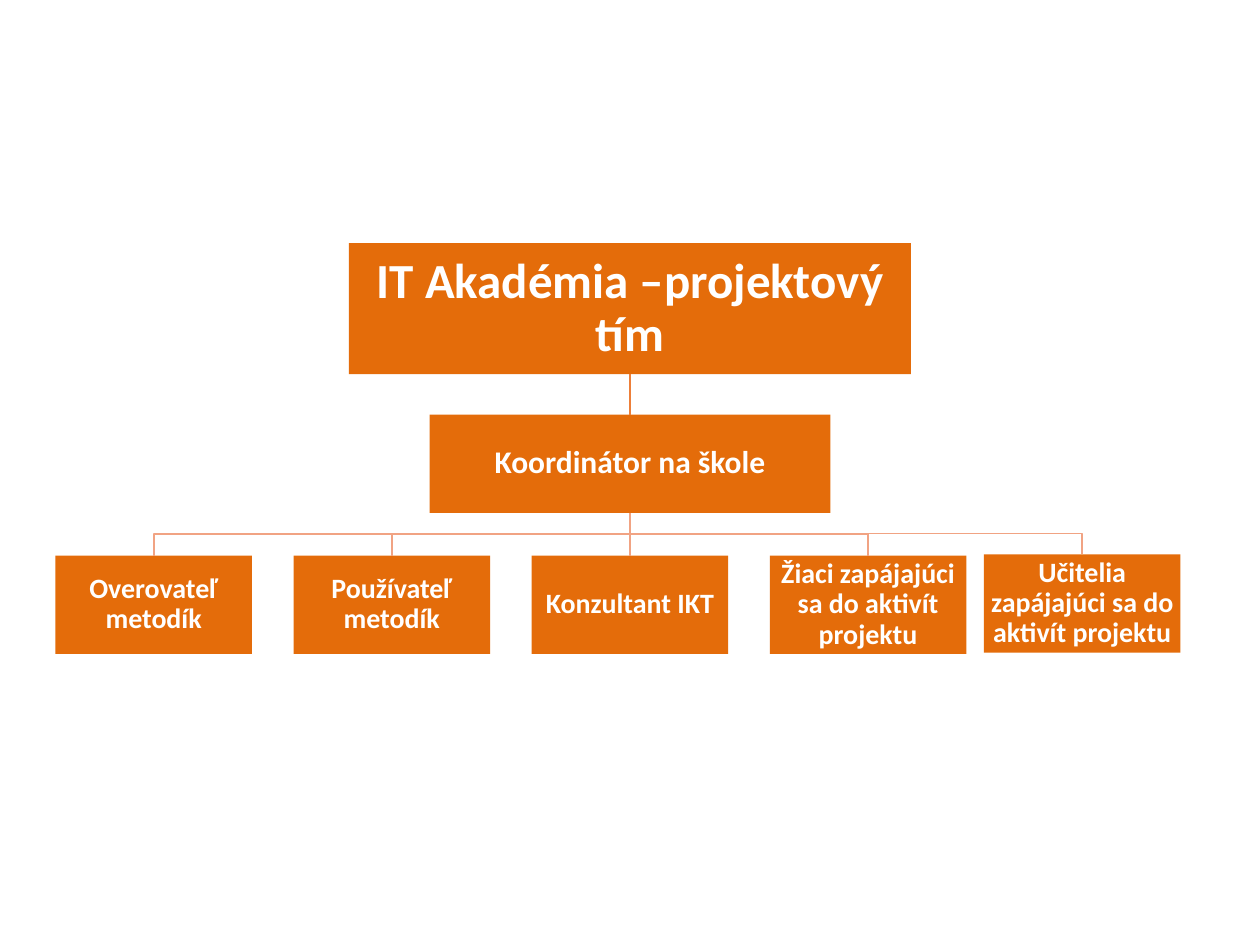
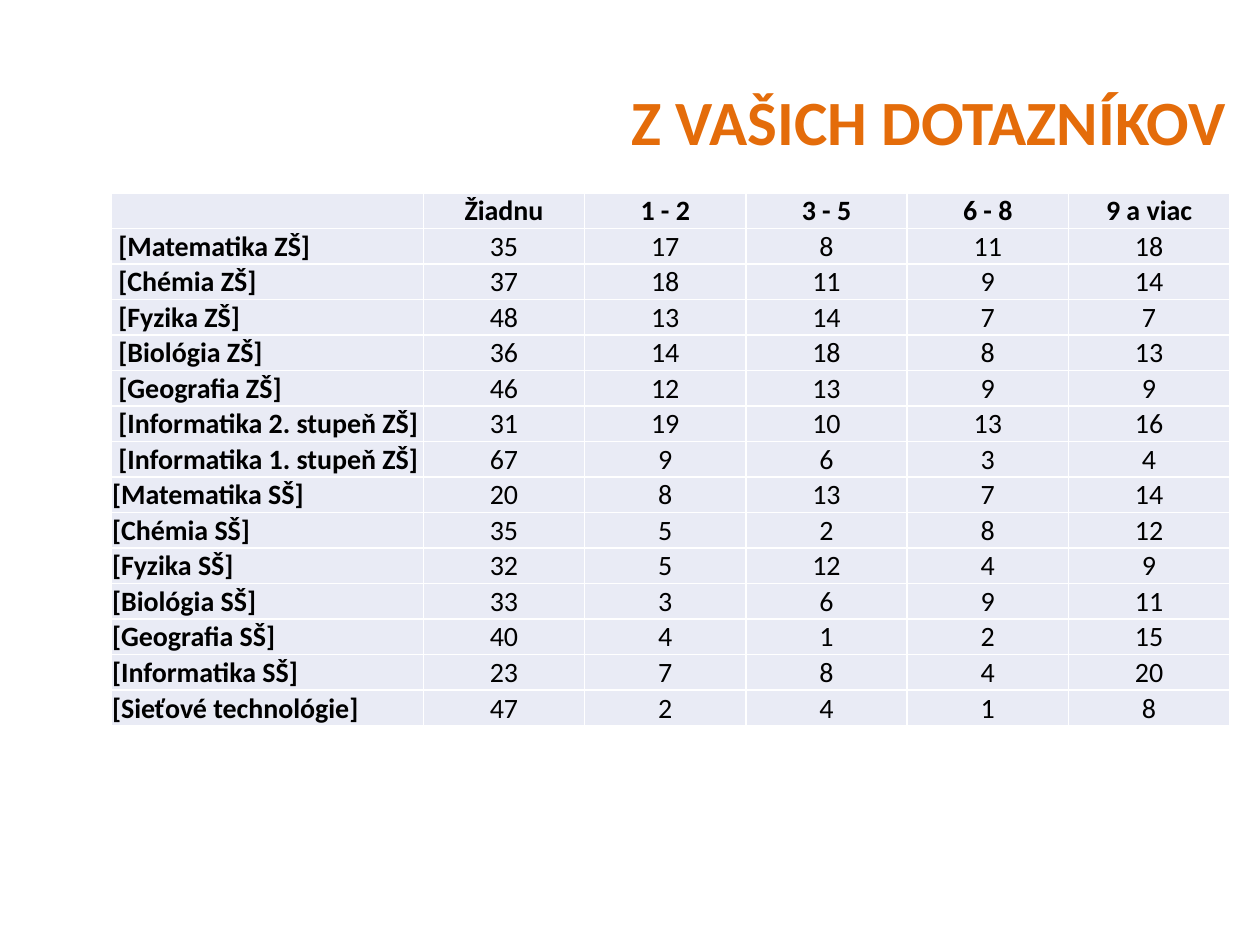
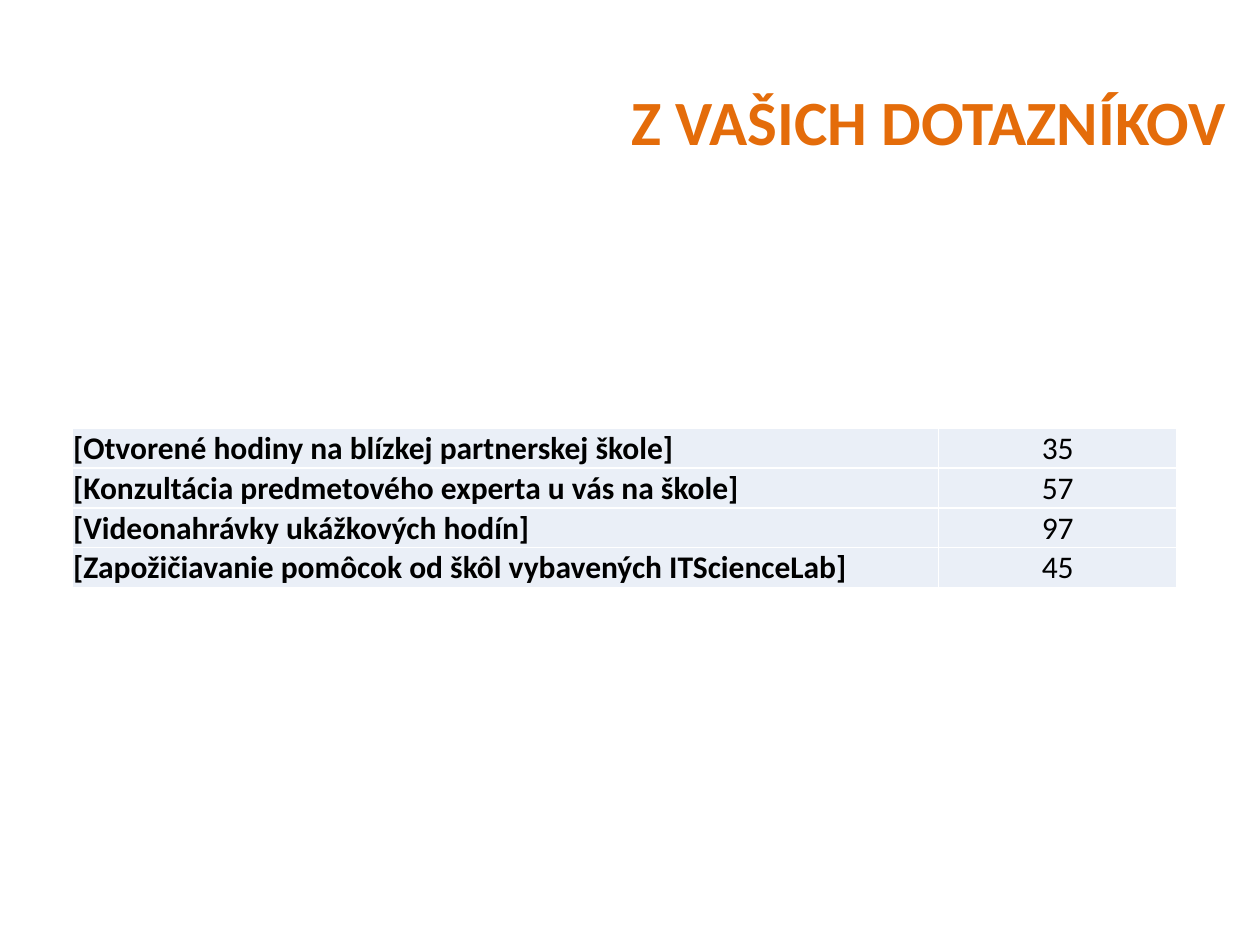
"""Build three slides: a project team chart and two questionnaire tables."""
from lxml.etree import SubElement
from pptx import Presentation
from pptx.dml.color import RGBColor
from pptx.enum.shapes import MSO_CONNECTOR, MSO_SHAPE
from pptx.enum.text import MSO_ANCHOR, MSO_AUTO_SIZE, PP_ALIGN
from pptx.oxml.ns import qn
from pptx.util import Inches, Pt


def rgb(value):
    return RGBColor.from_string(value)


class Deck:
    FONT = "Calibri"
    ORANGE, WHITE, BLACK = "E46C0A", "FFFFFF", "000000"
    TITLE_ONLY, BLANK = 5, 6

    def __init__(self):
        self.prs = Presentation()
        self.prs.slide_width, self.prs.slide_height = Inches(10), Inches(7.5)
        self.slide = None

    def add_slide(self, title=None):
        layout = self.TITLE_ONLY if title else self.BLANK
        self.slide = self.prs.slides.add_slide(self.prs.slide_layouts[layout])
        if title:
            heading = self.slide.shapes.title
            heading.left, heading.top = Inches(3.22), Inches(0.67)
            heading.width, heading.height = Inches(6.61), Inches(0.64)
            frame = heading.text_frame
            frame.auto_size = MSO_AUTO_SIZE.NONE
            frame.vertical_anchor = MSO_ANCHOR.MIDDLE
            self.set_text(frame, title, 36, self.ORANGE, True, PP_ALIGN.RIGHT, 0.9)

    def set_text(self, frame, text, size, color, bold, align, spacing=None):
        frame.text = text
        paragraph = frame.paragraphs[0]
        paragraph.alignment = align
        paragraph.line_spacing = spacing
        font = paragraph.font
        font.name, font.size, font.bold = self.FONT, Pt(size), bold
        font.color.rgb = rgb(color)
        if not text:
            paragraph._p.get_or_add_endParaRPr().set("sz", str(size * 100))

    def box(self, text, center, top, width, height, size, inset=0.01):
        box = self.slide.shapes.add_shape(
            MSO_SHAPE.RECTANGLE, Inches(center - width / 2), Inches(top),
            Inches(width), Inches(height))
        box.shadow.inherit = False
        box.fill.solid()
        box.fill.fore_color.rgb = rgb(self.ORANGE)
        box.line.fill.background()
        frame = box.text_frame
        frame.word_wrap = True
        frame.vertical_anchor = MSO_ANCHOR.MIDDLE
        frame.margin_left = frame.margin_right = Inches(inset)
        frame.margin_top = frame.margin_bottom = Inches(inset)
        self.set_text(frame, text, size, self.WHITE, True, PP_ALIGN.CENTER, 0.9)
        return box

    def link(self, upper, lower, color):
        line = self.slide.shapes.add_connector(MSO_CONNECTOR.STRAIGHT, 0, 0, 0, 0)
        line.begin_connect(upper, 2)
        line.end_connect(lower, 0)
        line.line.color.rgb = rgb(color)
        line.line.width = Pt(1)
        SubElement(line._element.spPr, qn("a:effectLst"))

    def branch(self, upper, lower, color):
        start_x, start_y = upper.left + upper.width // 2, upper.top + upper.height
        end_x, end_y = lower.left + lower.width // 2, lower.top
        bend_y = (start_y + end_y) // 2
        builder = self.slide.shapes.build_freeform(start_x, start_y)
        builder.add_line_segments(
            [(start_x, bend_y), (end_x, bend_y), (end_x, end_y)], close=False)
        elbow = builder.convert_to_shape()
        elbow.shadow.inherit = False
        elbow.fill.background()
        elbow.line.color.rgb = rgb(color)
        elbow.line.width = Pt(1)

    def border(self, cell):
        properties = cell._tc.get_or_add_tcPr()
        for side in ("lnL", "lnR", "lnT", "lnB"):
            edge = SubElement(properties, qn(f"a:{side}"), w=str(Pt(1)))
            fill = SubElement(edge, qn("a:solidFill"))
            SubElement(fill, qn("a:srgbClr"), val=self.WHITE)

    def table(self, rows, left, top, widths, row_height, size, fill,
              value_anchor, header=False, indented=()):
        table = self.slide.shapes.add_table(
            len(rows), len(widths), Inches(left), Inches(top),
            Inches(sum(widths)), Inches(row_height * len(rows))).table
        table.first_row = table.horz_banding = False
        for column, width in zip(table.columns, widths):
            column.width = Inches(width)
        for r, values in enumerate(rows):
            table.rows[r].height = Inches(row_height)
            for c, value in enumerate(values):
                cell = table.cell(r, c)
                is_label = c == 0
                self.border(cell)
                cell.fill.solid()
                cell.fill.fore_color.rgb = rgb(fill)
                cell.vertical_anchor = MSO_ANCHOR.BOTTOM if is_label else value_anchor
                cell.margin_left = Inches(0.06 if is_label and r in indented else 0.01)
                cell.margin_right = cell.margin_top = Inches(0.01)
                cell.margin_bottom = 0
                self.set_text(cell.text_frame, str(value), size, self.BLACK,
                              is_label or (header and r == 0),
                              PP_ALIGN.LEFT if is_label else PP_ALIGN.CENTER)


def team_slide(deck):
    deck.add_slide()
    middle, pitch, salmon = 5, 1.89, "F1A383"
    team = deck.box("IT Akadémia –projektový tím", middle, 1.93, 4.46, 1.04, 28, 0.02)
    coordinator = deck.box("Koordinátor na škole", middle, 3.29, 3.18, 0.78, 18)
    deck.link(team, coordinator, "ED7F39")
    roles = [
        ("Overovateľ metodík", middle - 2 * pitch, 4.41),
        ("Používateľ metodík", middle - pitch, 4.41),
        ("Konzultant IKT", middle, 4.41),
        ("Žiaci zapájajúci sa do aktivít projektu", middle + pitch, 4.41),
        ("Učitelia zapájajúci sa do aktivít projektu", 8.59, 4.4),
    ]
    for text, center, top in roles:
        role = deck.box(text, center, top, 1.56, 0.78, 16)
        connect = deck.link if center == middle else deck.branch
        connect(coordinator, role, salmon)


def subjects_slide(deck, title):
    deck.add_slide(title)
    rows = [
        ("", "Žiadnu", "1 - 2", "3 - 5", "6 - 8", "9 a viac"),
        ("[Matematika ZŠ]", 35, 17, 8, 11, 18),
        ("[Chémia ZŠ]", 37, 18, 11, 9, 14),
        ("[Fyzika ZŠ]", 48, 13, 14, 7, 7),
        ("[Biológia ZŠ]", 36, 14, 18, 8, 13),
        ("[Geografia ZŠ]", 46, 12, 13, 9, 9),
        ("[Informatika 2. stupeň ZŠ]", 31, 19, 10, 13, 16),
        ("[Informatika 1. stupeň ZŠ]", 67, 9, 6, 3, 4),
        ("[Matematika SŠ]", 20, 8, 13, 7, 14),
        ("[Chémia SŠ]", 35, 5, 2, 8, 12),
        ("[Fyzika SŠ]", 32, 5, 12, 4, 9),
        ("[Biológia SŠ]", 33, 3, 6, 9, 11),
        ("[Geografia SŠ]", 40, 4, 1, 2, 15),
        ("[Informatika SŠ]", 23, 7, 8, 4, 20),
        ("[Sieťové technológie]", 47, 2, 4, 1, 8),
    ]
    deck.table(rows, 0.88, 1.53, [2.48] + [1.28] * 5, 0.28, 16, "E9EBF5",
               MSO_ANCHOR.BOTTOM, header=True, indented=range(1, 8))


def support_slide(deck, title):
    deck.add_slide(title)
    rows = [
        ("[Otvorené hodiny na blízkej partnerskej škole]", 35),
        ("[Konzultácia predmetového experta u vás na škole]", 57),
        ("[Videonahrávky ukážkových hodín]", 97),
        ("[Zapožičiavanie pomôcok od škôl vybavených ITScienceLab]", 45),
    ]
    deck.table(rows, 0.57, 3.4, [6.88, 1.89], 0.31, 18, "EAEFF7", MSO_ANCHOR.MIDDLE)


def main():
    deck = Deck()
    title = "Z VAŠICH DOTAZNÍKOV"
    team_slide(deck)
    subjects_slide(deck, title)
    support_slide(deck, title)
    deck.prs.save("out.pptx")


if __name__ == "__main__":
    main()
